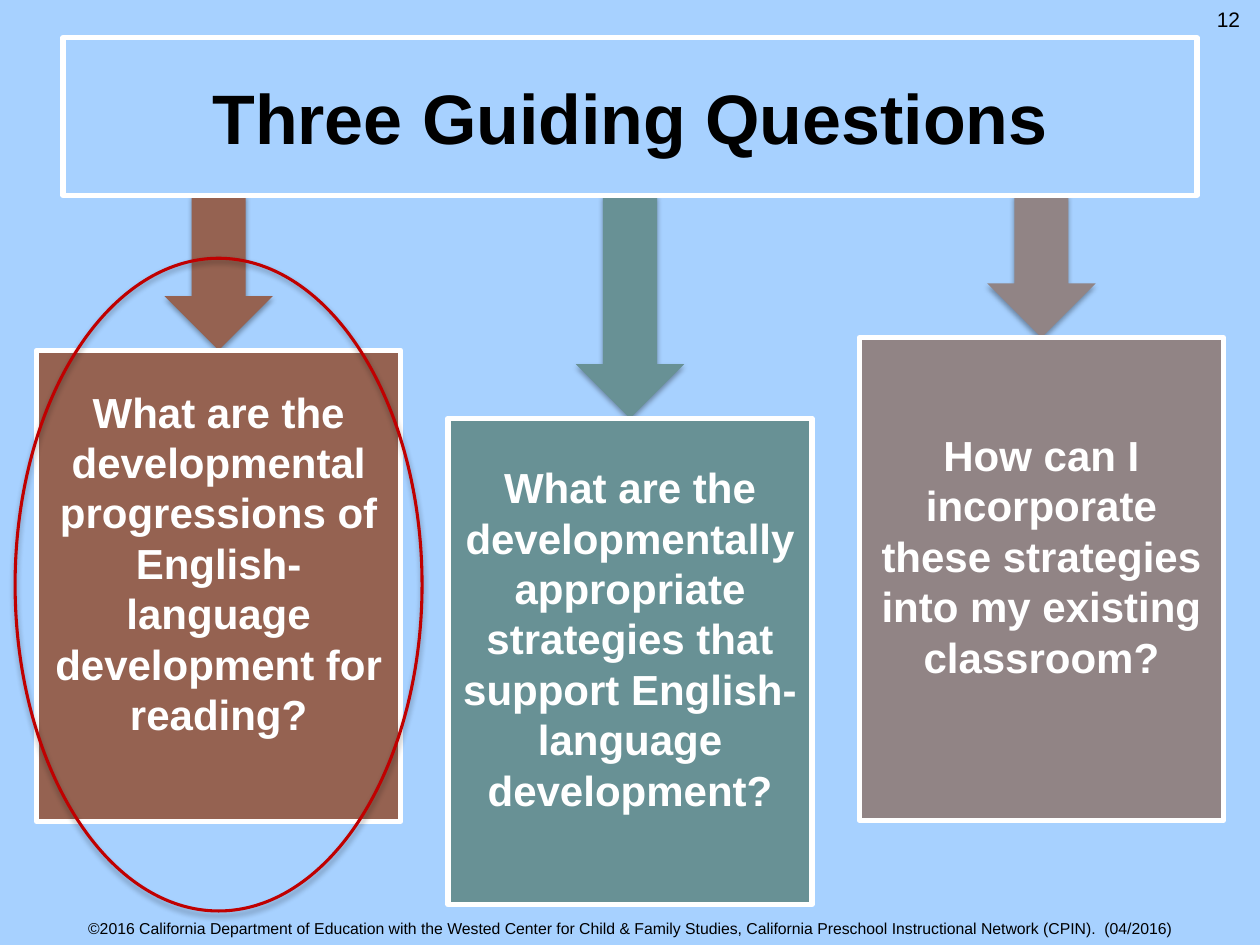
from lxml import etree
from pptx import Presentation
from pptx.dml.color import RGBColor
from pptx.enum.shapes import MSO_SHAPE
from pptx.enum.text import MSO_ANCHOR, PP_ALIGN
from pptx.oxml.ns import qn
from pptx.util import Inches, Pt

# Content
TITLE = "Three Guiding Questions"
PAGE = "12"
FOOTER = ("©2016 California Department of Education with the Wested Center for Child "
          "& Family Studies, California Preschool Instructional Network (CPIN).  (04/2016)")
BROWN = RGBColor(0x95, 0x62, 0x51)
TEAL = RGBColor(0x68, 0x91, 0x95)
GREY = RGBColor(0x91, 0x84, 0x85)
# (question, colour, card top, card height)
CARDS = [
    ("What are the developmental progressions of English-language "
     "development for reading?", BROWN, 2.78, 3.74),
    ("What are the developmentally appropriate strategies that support "
     "English-language development?", TEAL, 3.32, 3.86),
    ("How can I incorporate these strategies into my existing classroom?",
     GREY, 2.68, 3.83),
]

# Style
SKY = RGBColor(0xA7, 0xD1, 0xFF)
WHITE = RGBColor(0xFF, 0xFF, 0xFF)
BLACK = RGBColor(0, 0, 0)
RED = RGBColor(0xC0, 0, 0)
FONT = "Arial"

# Layout
SLIDE_W, SLIDE_H = 10, 7.5
TITLE_X, TITLE_Y, TITLE_W, TITLE_H = 0.5, 0.3, 9, 1.25
CARD_X, CARD_W, CARD_STEP = 0.29, 2.89, 3.265
ARROW_W = 0.86


def add_shape(kind, x, y, w, h, fill=None, line=None, width=0):
    sp = s.shapes.add_shape(kind, Inches(x), Inches(y), Inches(w), Inches(h))
    sp.shadow.inherit = False
    if fill is None:
        sp.fill.background()
    else:
        sp.fill.solid()
        sp.fill.fore_color.rgb = fill
    if line is None:
        sp.line.fill.background()
    else:
        sp.line.color.rgb = line
        sp.line.width = Pt(width)
    return sp


def add_shadow(sp):
    effects = sp._element.spPr.find(qn("a:effectLst"))
    shadow = etree.SubElement(effects, qn("a:outerShdw"), blurRad=str(Pt(3.1)),
                              dist=str(Pt(1.8)), dir="5400000", rotWithShape="0")
    color = etree.SubElement(shadow, qn("a:srgbClr"), val="000000")
    etree.SubElement(color, qn("a:alpha"), val="35000")


def write(sp, text, size, color, bold=False, anchor=MSO_ANCHOR.MIDDLE):
    tf = sp.text_frame
    tf.word_wrap = True
    tf.vertical_anchor = anchor
    p = tf.paragraphs[0]
    p.alignment = PP_ALIGN.CENTER
    r = p.add_run()
    r.text = text
    r.font.name, r.font.size, r.font.bold = FONT, Pt(size), bold
    r.font.color.rgb = color
    return tf


def add_text(x, y, w, h, *args, **kwargs):
    box = s.shapes.add_textbox(Inches(x), Inches(y), Inches(w), Inches(h))
    return write(box, *args, **kwargs)


prs = Presentation()
prs.slide_width, prs.slide_height = Inches(SLIDE_W), Inches(SLIDE_H)
s = prs.slides.add_slide(prs.slide_layouts[6])
s.background.fill.solid()
s.background.fill.fore_color.rgb = SKY

# Footer
add_text(0, 7.24, SLIDE_W, 0.26, FOOTER, 9, BLACK)

# Arrows from the title down to each card
title_bottom = TITLE_Y + TITLE_H
for i, (_, color, top, _) in enumerate(CARDS):
    length = top - title_bottom
    center_x = CARD_X + i * CARD_STEP + CARD_W / 2
    center_y = title_bottom + length / 2
    arrow = add_shape(MSO_SHAPE.RIGHT_ARROW, center_x - length / 2,
                      center_y - ARROW_W / 2, length, ARROW_W, color)
    arrow.rotation = 90
    add_shadow(arrow)

# Title
title = add_shape(MSO_SHAPE.RECTANGLE, TITLE_X, TITLE_Y, TITLE_W, TITLE_H,
                  line=WHITE, width=3)
write(title, TITLE, 40, BLACK, bold=True)

# Question cards, with the text set a little above the middle
for i, (question, color, top, height) in enumerate(CARDS):
    card = add_shape(MSO_SHAPE.RECTANGLE, CARD_X + i * CARD_STEP, top,
                     CARD_W, height, color, WHITE, 3)
    tf = write(card, question, 24, WHITE, bold=True)
    tf.margin_bottom = Inches(0.42)

# Page number
add_text(9.5, 0, 0.5, 0.4, PAGE, 12, BLACK, anchor=MSO_ANCHOR.TOP)

# Ring around the first question
ring = add_shape(MSO_SHAPE.FLOWCHART_CONNECTOR, 0.12, 2.05, 3.23, 5.18,
                 line=RED, width=1.75)
add_shadow(ring)

prs.save("out.pptx")
